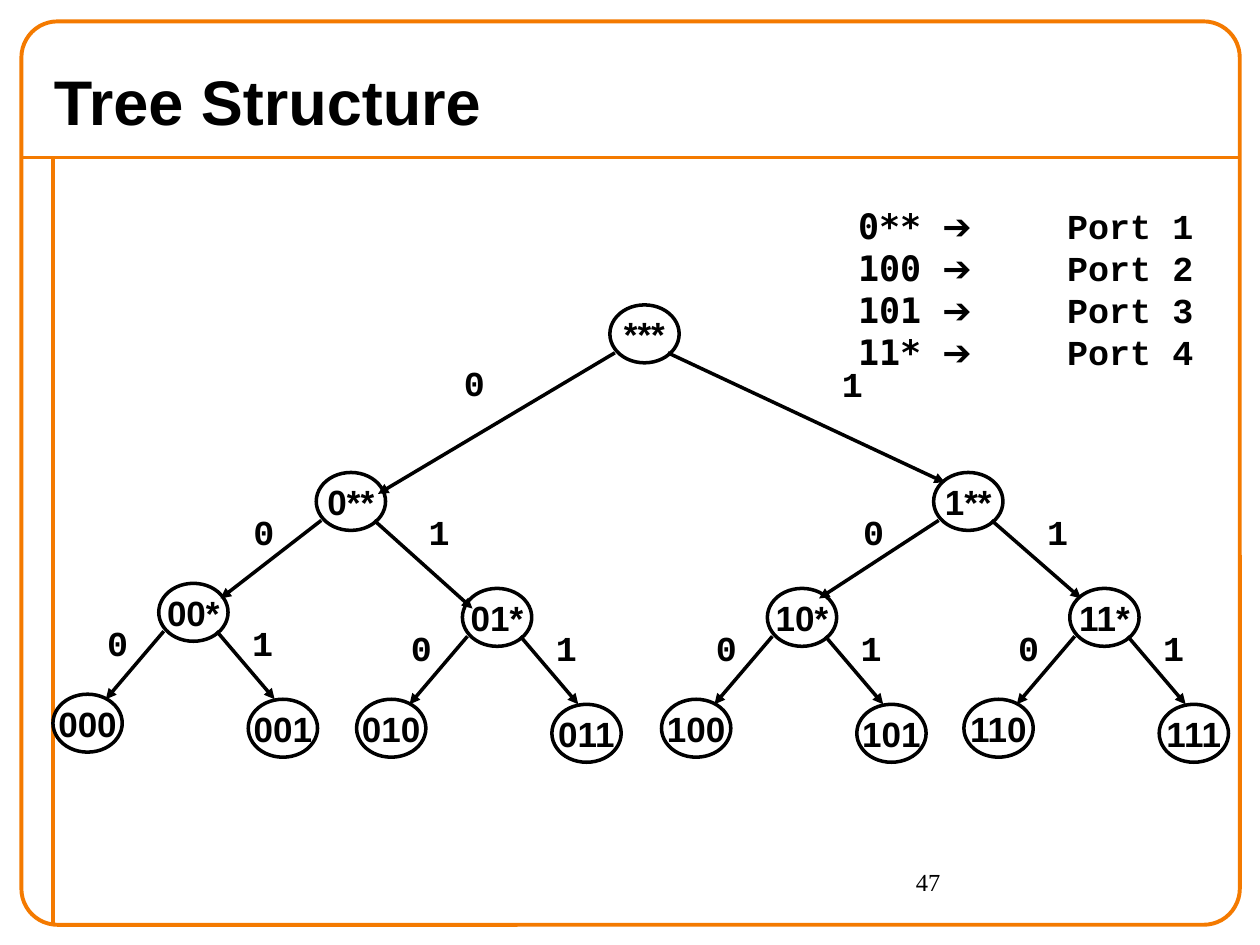
from lxml import etree
from pptx import Presentation
from pptx import util as u
from pptx.dml.color import RGBColor
from pptx.enum import shapes, text
from pptx.oxml.ns import qn

COLORS = {"ink": "000000", "paper": "FFFFFF", "frame": "F47A00"}
NODE_W, NODE_H = 0.55, 0.46

# Upper nodes: position, then arrow tip and bit label position per branch
UPPER_NODES = {
    "***": ((4.84, 2.42), ((3, 3.92), (7.5, 3.83)), ((3.5, 2.82), (6.5, 2.83))),
    "0**": ((2.51, 3.75), ((1.75, 4.75), (3.75, 4.83)), ((1.83, 4), (3.22, 4))),
    "1**": ((7.41, 3.75), ((6.5, 4.75), (8.58, 4.75)), ((6.67, 4), (8.13, 4))),
}
LEAF_PARENTS = {"00*": (1.26, 4.63), "01*": (3.67, 4.67),
                "10*": (6.09, 4.67), "11*": (8.49, 4.67)}

# Offsets from a parent node, for bit 0 and bit 1
BRANCH_STARTS = ((0.04, 0.38), (0.46, 0.38))
LEAVES = ((-0.84, 0.88), (0.71, 0.92))
LEAF_TIPS = ((-0.42, 0.92), (0.92, 0.92))
LEAF_BITS = ((-0.59, 0.25), (0.56, 0.25))

ROUTES = (("0**", "Port 1"), ("100", "Port 2"), ("101", "Port 3"), ("11*", "Port 4"))


def shift(origin, offset):
    return origin[0] + offset[0], origin[1] + offset[1]


class SlideBuilder:
    def __init__(self, slide):
        self.slide = slide

    def color(self, name):
        return RGBColor.from_string(COLORS[name])

    def style_run(self, run, size, font, bold=True):
        run.font.size = u.Pt(size)
        run.font.name = font
        run.font.bold = bold
        run.font.color.rgb = self.color("ink")

    def style_line(self, line, color, width):
        line.color.rgb = self.color(color)
        line.width = u.Pt(width)

    def shape(self, kind, box, line_color, width, fill=None):
        shape = self.slide.shapes.add_shape(kind, *map(u.Inches, box))
        shape.shadow.inherit = False
        if fill:
            shape.fill.solid()
            shape.fill.fore_color.rgb = self.color(fill)
        else:
            shape.fill.background()
        self.style_line(shape.line, line_color, width)
        return shape

    def label(self, box, wording, size, font, bold=True, align=None, anchor=None):
        frame = self.slide.shapes.add_textbox(*map(u.Inches, box)).text_frame
        frame.word_wrap = True
        frame.vertical_anchor = anchor
        frame.text = wording
        frame.paragraphs[0].alignment = align
        self.style_run(frame.paragraphs[0].runs[0], size, font, bold)

    def line(self, start, end, color="ink", width=2, arrow=False):
        line = self.slide.shapes.add_connector(
            shapes.MSO_CONNECTOR.STRAIGHT, *map(u.Inches, (*start, *end)))
        self.style_line(line.line, color, width)
        properties = line.element.spPr
        if arrow:
            etree.SubElement(properties.find(qn("a:ln")), qn("a:tailEnd"), type="triangle")
        etree.SubElement(properties, qn("a:effectLst"))

    def node(self, prefix, at):
        node = self.shape(shapes.MSO_SHAPE.OVAL, (*at, NODE_W, NODE_H), "ink", 2, "paper")
        frame = node.text_frame
        frame.word_wrap = False
        frame.vertical_anchor = text.MSO_ANCHOR.MIDDLE
        frame.text = prefix
        frame.paragraphs[0].alignment = text.PP_ALIGN.CENTER
        self.style_run(frame.paragraphs[0].runs[0], 20, "Arial")

    def branches(self, parent, tips, bit_places):
        """Draw the arrows for bit 0 and bit 1 with their labels."""
        for bit, (start, tip, place) in enumerate(zip(BRANCH_STARTS, tips, bit_places)):
            self.line(shift(parent, start), tip, arrow=True)
            self.label((*place, 0.53, 0.43), str(bit), 20, "Courier New",
                       align=text.PP_ALIGN.CENTER)

    def routing_table(self, box, routes, tab_stops):
        frame = self.slide.shapes.add_textbox(*map(u.Inches, box)).text_frame
        frame.word_wrap = True
        frame.margin_left = u.Inches(0.81)
        frame.margin_top = u.Inches(0.37)
        for index, (prefix, port) in enumerate(routes):
            row = frame.add_paragraph() if index else frame.paragraphs[0]
            tabs = etree.SubElement(row._p.get_or_add_pPr(), qn("a:tabLst"))
            for stop in tab_stops:
                etree.SubElement(tabs, qn("a:tab"), pos=str(u.Inches(stop)), algn="l")
            for wording, font in ((prefix + "\t", "DejaVu Sans Mono"),
                                  ("➔\t", "Arial"), (port, "Courier New")):
                run = row.add_run()
                run.text = wording
                self.style_run(run, 20, font)


def main():
    deck = Presentation()
    deck.slide_width, deck.slide_height = u.Inches(10), u.Inches(7.5)
    builder = SlideBuilder(deck.slides.add_slide(deck.slide_layouts[6]))

    builder.line((0.17, 1.25), (9.83, 1.25), "frame", 2.25)
    builder.line((0.42, 1.25), (0.42, 7.33), "frame", 2.25)
    border = builder.shape(shapes.MSO_SHAPE.ROUNDED_RECTANGLE,
                           (0.17, 0.17, 9.67, 7.17), "frame", 2.25)
    border.adjustments[0] = 0.04
    builder.label((7.17, 6.83, 2.33, 0.5), "47", 14, "Times New Roman", bold=False)
    builder.label((0.33, 0.42, 9.5, 0.75), "Tree Structure", 36, "Arial",
                  anchor=text.MSO_ANCHOR.MIDDLE)

    for prefix, at in LEAF_PARENTS.items():
        builder.node(prefix, at)
        for bit, offset in enumerate(LEAVES):
            builder.node(prefix.replace("*", str(bit)), shift(at, offset))
        builder.branches(at, [shift(at, tip) for tip in LEAF_TIPS],
                         [shift(at, place) for place in LEAF_BITS])

    for prefix, (at, _, _) in UPPER_NODES.items():
        builder.node(prefix, at)
    for at, tips, bit_places in UPPER_NODES.values():
        builder.branches(at, tips, bit_places)

    builder.routing_table((6, 1.25, 3.58, 1.78), ROUTES, (0.67, 1.66))
    deck.save("out.pptx")


if __name__ == "__main__":
    main()
